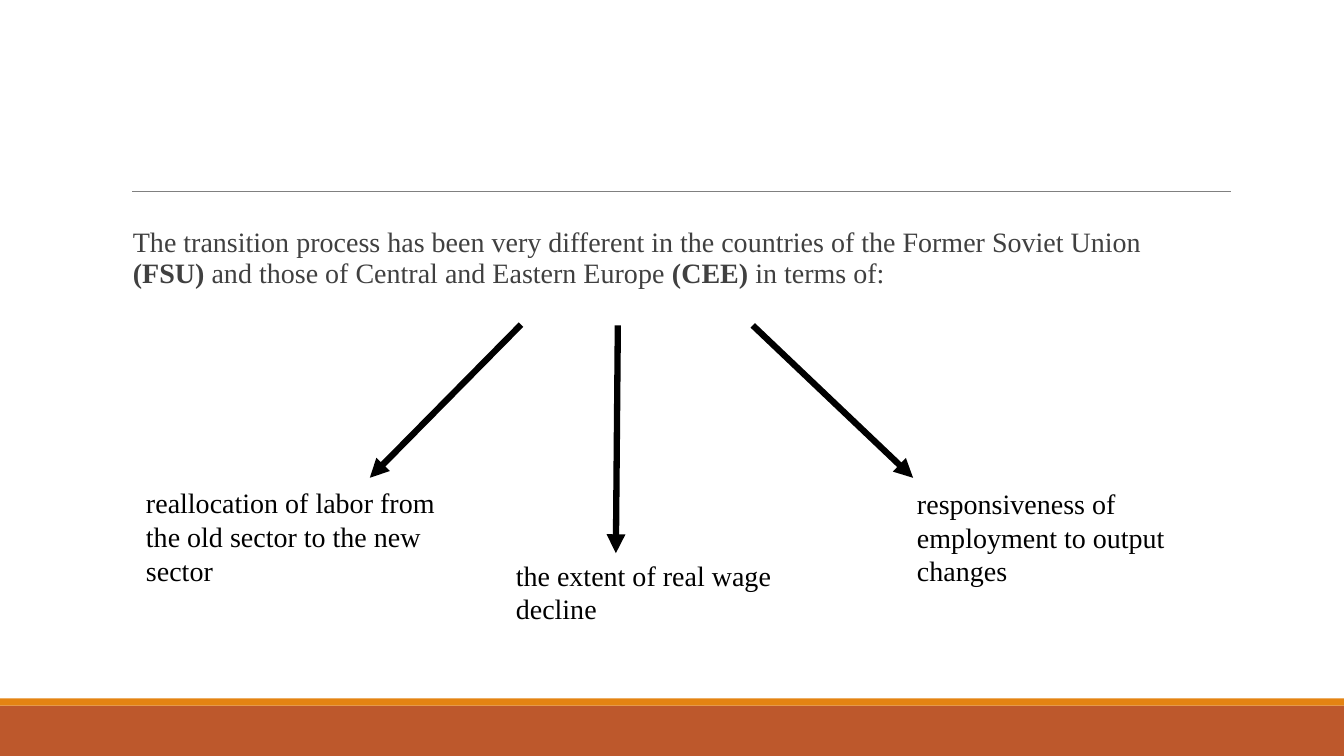
from dataclasses import dataclass

from lxml import etree
from pptx import Presentation
from pptx.dml.color import RGBColor
from pptx.enum.shapes import MSO_CONNECTOR, MSO_SHAPE
from pptx.oxml.ns import qn
from pptx.util import Cm, Pt

STRAIGHT = MSO_CONNECTOR.STRAIGHT
RECTANGLE = MSO_SHAPE.RECTANGLE


@dataclass(frozen=True)
class Theme:
    font: str = "Times New Roman"
    size: int = 20
    ink: str = "000000"
    body: str = "404040"
    rule: str = "808080"
    footer: str = "BD582C"
    accent: str = "E48312"
    rule_width: float = 0.5
    arrow_width: float = 4.5


class SlideBuilder:
    """Draws themed elements on one slide, with lengths in centimetres."""

    def __init__(self, slide, theme):
        self.s = slide
        self.theme = theme

    def band(self, left, top, width, height, color):
        sp = self.s.shapes.add_shape(RECTANGLE, Cm(left), Cm(top), Cm(width), Cm(height))
        sp.shadow.inherit = False
        sp.fill.solid()
        sp.fill.fore_color.rgb = RGBColor.from_string(color)
        sp.line.fill.background()

    def line(self, start, end, color, width, arrow=False):
        cx = self.s.shapes.add_connector(STRAIGHT, *map(Cm, start + end))
        cx.line.color.rgb = RGBColor.from_string(color)
        cx.line.width = Pt(width)
        if arrow:
            etree.SubElement(cx.line._get_or_add_ln(), qn("a:tailEnd"), type="triangle")
        etree.SubElement(cx._element.spPr, qn("a:effectLst"))

    def text(self, left, top, width, height, runs, color):
        sp = self.s.shapes.add_textbox(Cm(left), Cm(top), Cm(width), Cm(height))
        tf = sp.text_frame
        tf.word_wrap = True
        p = tf.paragraphs[0]
        p.font.name = self.theme.font
        p.font.size = Pt(self.theme.size)
        p.font.color.rgb = RGBColor.from_string(color)
        for words, bold in runs:
            r = p.add_run()
            r.text = words
            r.font.name = self.theme.font
            r.font.size = Pt(self.theme.size)
            r.font.color.rgb = RGBColor.from_string(color)
            r.font.bold = bold
        return tf

    def statement(self, left, top, width, height, runs):
        tf = self.text(left, top, width, height, runs, self.theme.body)
        tf.margin_left = tf.margin_right = 0
        p = tf.paragraphs[0]
        p.line_spacing = 0.9
        p.space_before = Pt(12)
        p.space_after = Pt(2)


def main():
    theme = Theme()
    prs = Presentation()
    prs.slide_width, prs.slide_height = Cm(33.87), Cm(19.05)
    slide = SlideBuilder(prs.slides.add_slide(prs.slide_layouts[6]), theme)

    slide.band(0, 17.78, 33.87, 1.27, theme.footer)
    slide.band(0, 17.6, 33.87, 0.18, theme.accent)
    slide.line((3.33, 4.82), (31.01, 4.82), theme.rule, theme.rule_width)

    slide.statement(3.35, 5.64, 27.38, 3.94, [
        ("The transition process has been very different in the countries "
         "of the Former Soviet Union ", False),
        ("(FSU) ", True),
        ("and those of Central and Eastern Europe ", False),
        ("(CEE)", True),
        (" in terms of:", False),
    ])

    differences = [
        ((13.13, 8.18), (9.32, 12.04), (3.43, 12.12, 8.36, 2.82),
         "reallocation of labor from the old sector to the new sector"),
        ((15.57, 8.2), (15.52, 13.94), (12.75, 13.94, 7.34, 1.96),
         "the extent of real wage decline"),
        ((18.97, 8.2), (23.01, 12.04), (22.86, 12.14, 7.77, 2.82),
         "responsiveness of employment to output changes"),
    ]
    for start, end, box, words in differences:
        slide.line(start, end, theme.ink, theme.arrow_width, arrow=True)
        slide.text(*box, [(words, False)], theme.ink)

    prs.save("out.pptx")


if __name__ == "__main__":
    main()
